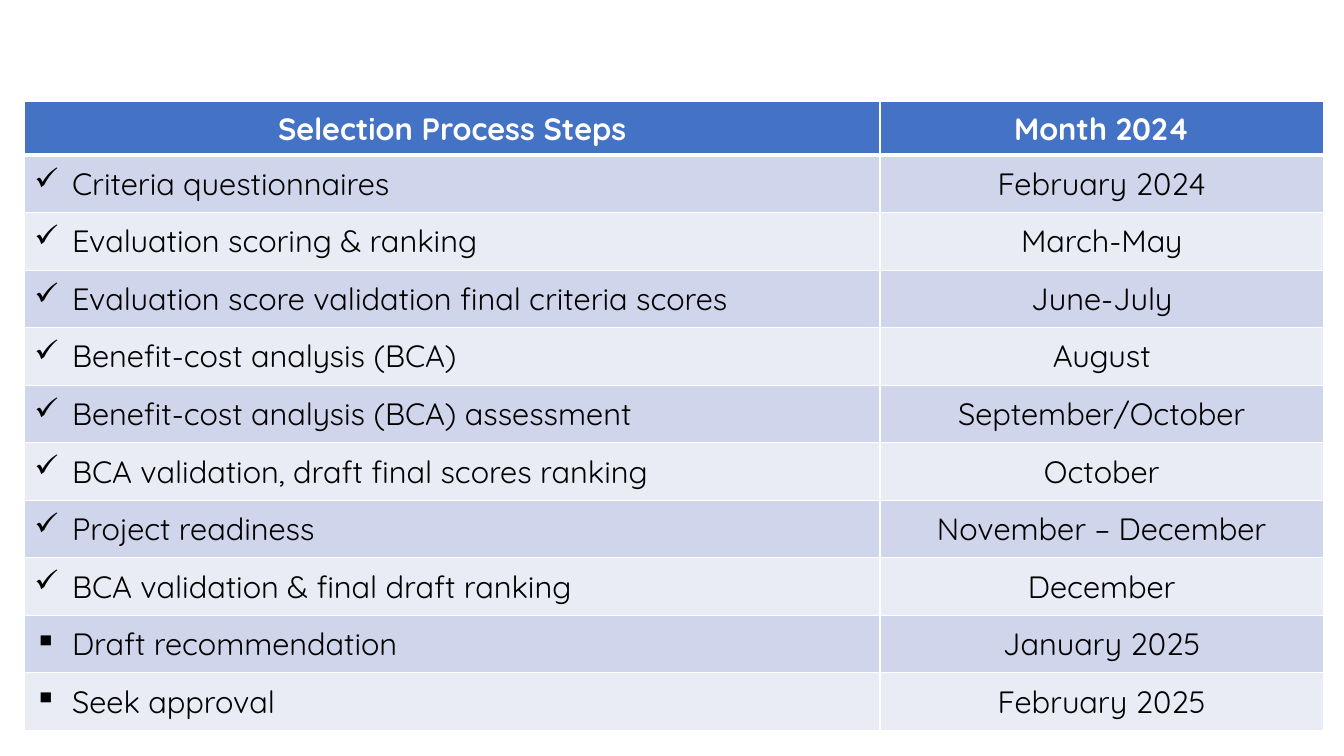
from dataclasses import dataclass

from lxml import etree
from pptx import Presentation
from pptx.dml.color import RGBColor
from pptx.enum.text import MSO_ANCHOR, PP_ALIGN
from pptx.oxml.ns import qn
from pptx.util import Pt

LEFT, CENTER = PP_ALIGN.LEFT, PP_ALIGN.CENTER
MIDDLE = MSO_ANCHOR.MIDDLE
BLANK = 6

FONT_NAME = "Quicksand"
WHITE, BLACK = "FFFFFF", "000000"
HEADER_FILL = "4472C4"
BAND_FILLS = ("CFD5EA", "E9EBF5")
DONE, OPEN = "✓", "▪"

COLUMN_WIDTHS = (611.28, 316.8)
HEADER_HEIGHT, STEP_HEIGHT = 38.16, 41.1
BULLET_INDENT = 27

HEADER_FORMAT = {"name": FONT_NAME, "size": Pt(22), "bold": True}
STEP_FORMAT = {**HEADER_FORMAT, "bold": False}


@dataclass(frozen=True)
class Step:
    name: str
    month: str
    bullet: str = DONE


HEADERS = ("Selection Process Steps", "Month 2024")
STEPS = (
    Step("Criteria questionnaires", "February 2024"),
    Step("Evaluation scoring & ranking", "March-May"),
    Step("Evaluation score validation final criteria scores", "June-July"),
    Step("Benefit-cost analysis (BCA)", "August"),
    Step("Benefit-cost analysis (BCA) assessment", "September/October"),
    Step("BCA validation, draft final scores ranking", "October"),
    Step("Project readiness", "November – December"),
    Step("BCA validation & final draft ranking", "December"),
    Step("Draft recommendation", "January 2025", OPEN),
    Step("Seek approval", "February 2025", OPEN),
)


def set_color(color_format, hex_color: str) -> None:
    color_format.rgb = RGBColor.from_string(hex_color)


def format_font(font, values: dict, color: str) -> None:
    for name, value in values.items():
        setattr(font, name, value)
    set_color(font.color, color)


def add_bullet(paragraph, character: str) -> None:
    properties = paragraph._p.get_or_add_pPr()
    properties.set("marL", str(Pt(BULLET_INDENT)))
    properties.set("indent", str(-Pt(BULLET_INDENT)))
    etree.SubElement(properties, qn("a:buChar"), char=character)


def add_borders(cell, top: float, bottom: float) -> None:
    properties = cell._tc.get_or_add_tcPr()
    for side, width in {"L": 1, "R": 1, "T": top, "B": bottom}.items():
        line = etree.SubElement(properties, qn(f"a:ln{side}"), w=str(Pt(width)))
        fill = etree.SubElement(line, qn("a:solidFill"))
        etree.SubElement(fill, qn("a:srgbClr"), val=WHITE)


def fill_cell(cell, text: str, fill: str, values: dict, color: str,
              top: float = 1, bottom: float = 1, bullet: str = "") -> None:
    """Write and format one cell, left-aligned if it has a bullet."""
    add_borders(cell, top, bottom)
    cell.fill.solid()
    set_color(cell.fill.fore_color, fill)
    cell.vertical_anchor = MIDDLE
    cell.text = text
    paragraph = cell.text_frame.paragraphs[0]
    paragraph.alignment = LEFT if bullet else CENTER
    if bullet:
        add_bullet(paragraph, bullet)
    format_font(paragraph.runs[0].font, values, color)


def add_steps_table(slide) -> None:
    height = HEADER_HEIGHT + STEP_HEIGHT * len(STEPS)
    table = slide.shapes.add_table(
        len(STEPS) + 1, len(HEADERS), Pt(17.28), Pt(72.72),
        Pt(sum(COLUMN_WIDTHS)), Pt(height)).table
    for column, width in zip(table.columns, COLUMN_WIDTHS):
        column.width = Pt(width)
    for row in table.rows:
        row.height = Pt(STEP_HEIGHT)
    table.rows[0].height = Pt(HEADER_HEIGHT)

    for column, header in enumerate(HEADERS):
        fill_cell(table.cell(0, column), header, HEADER_FILL,
                  HEADER_FORMAT, WHITE, bottom=3)
    for index, step in enumerate(STEPS):
        fill = BAND_FILLS[index % 2]
        top = 1 if index else 3
        for column, (text, bullet) in enumerate(
                ((step.name, step.bullet), (step.month, ""))):
            fill_cell(table.cell(index + 1, column), text, fill,
                      STEP_FORMAT, BLACK, top=top, bullet=bullet)


def main() -> None:
    presentation = Presentation()
    presentation.slide_width = Pt(960)
    presentation.slide_height = Pt(540)
    slide = presentation.slides.add_slide(presentation.slide_layouts[BLANK])
    add_steps_table(slide)
    presentation.save("out.pptx")


if __name__ == "__main__":
    main()
